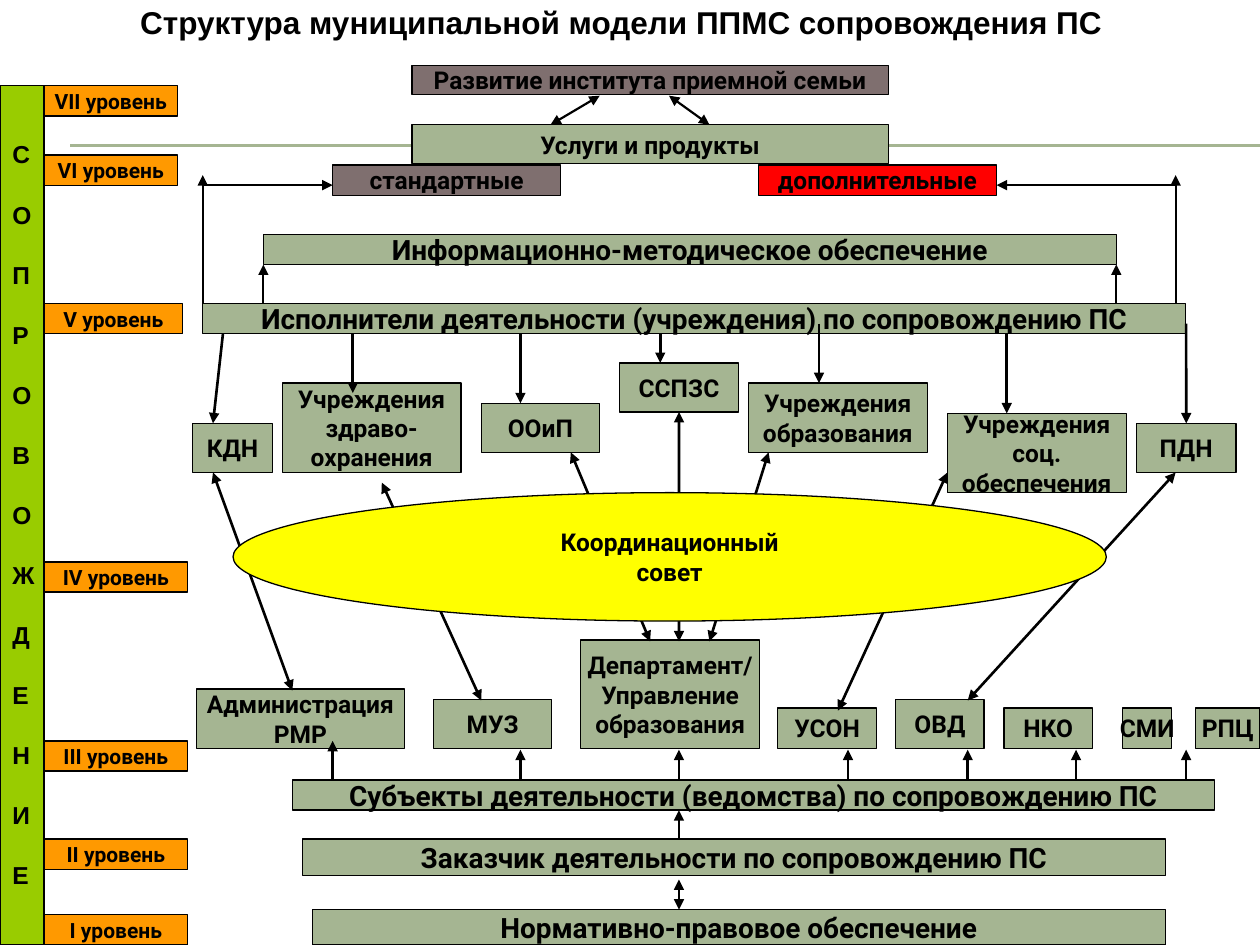
from dataclasses import dataclass
from pptx import Presentation
from pptx.dml.color import RGBColor
from pptx.enum.shapes import MSO_CONNECTOR, MSO_SHAPE
from pptx.enum.text import MSO_ANCHOR, PP_ALIGN
from pptx.oxml.xmlchemy import OxmlElement
from pptx.util import Pt

RECT, OVAL = MSO_SHAPE.RECTANGLE, MSO_SHAPE.OVAL
LINE = MSO_CONNECTOR.STRAIGHT
MID, TOP, LOW = MSO_ANCHOR.MIDDLE, MSO_ANCHOR.TOP, MSO_ANCHOR.BOTTOM
LEFT, CENTER = PP_ALIGN.LEFT, PP_ALIGN.CENTER
BLACK, SAGE, TAUPE = "000000", "A5B592", "7F6F6F"
ORANGE, RED, YELLOW, LIME = "FF9900", "FF0000", "FFFF00", "99CC00"


@dataclass
class Box:
    text: str
    x: float
    y: float
    w: float
    h: float
    size: float = 14
    fill: str = SAGE
    kind: int = RECT


@dataclass
class Arrow:
    x1: float
    y1: float
    x2: float
    y2: float
    width: float = 1.5
    head: bool = False
    tail: bool = True
    color: str = BLACK


def tint(code: str) -> RGBColor:
    return RGBColor.from_string(code)


def style(frame, text: str, size: float, face: str = "Roboto", align=CENTER,
          anchor=MID, gap: float = 0) -> None:
    frame.text = text
    frame.word_wrap = False
    frame.vertical_anchor = anchor
    form = {"size": Pt(size), "name": face, "bold": True}
    for row, para in enumerate(frame.paragraphs):
        para.alignment = align
        if row and gap:
            para.space_before = Pt(gap)
        for key, value in form.items():
            setattr(para.font, key, value)
        para.font.color.rgb = tint(BLACK)


def draw_box(slide, box: Box):
    shape = slide.shapes.add_shape(box.kind, Pt(box.x), Pt(box.y), Pt(box.w), Pt(box.h))
    shape.shadow.inherit = False
    shape.fill.solid()
    shape.fill.fore_color.rgb = tint(box.fill)
    shape.line.color.rgb = tint(BLACK)
    shape.line.width = Pt(0.75)
    style(shape.text_frame, box.text, box.size)
    return shape


def draw_line(slide, arrow: Arrow):
    line = slide.shapes.add_connector(
        LINE, Pt(arrow.x1), Pt(arrow.y1), Pt(arrow.x2), Pt(arrow.y2))
    line.line.color.rgb = tint(arrow.color)
    line.line.width = Pt(arrow.width)
    for show, tag in ((arrow.head, "a:headEnd"), (arrow.tail, "a:tailEnd")):
        if show:
            end = OxmlElement(tag)
            end.set("type", "triangle")
            line.get_or_add_ln().append(end)
    line._element.spPr.append(OxmlElement("a:effectLst"))
    return line


LEVELS = [
    Box(f"{num} уровень", 25.2, y, w, 17.3, 12, ORANGE)
    for num, y, w in (
        ("I", 522.7, 82), ("II", 479.5, 82), ("III", 423.4, 82), ("IV", 321.1, 82),
        ("V", 173.5, 79.2), ("VI", 88.6, 76.3), ("VII", 49, 76.3))
]
BARS = [
    Box("Нормативно-правовое обеспечение", 178.5, 519.8, 487.5, 20.2, 16),
    Box("Заказчик деятельности по сопровождению ПС", 172.8, 479.5, 493.2, 20.9, 16),
    Box("Субъекты деятельности (ведомства) по сопровождению ПС", 167, 445.7, 527, 17.3, 16),
    Box("Информационно-методическое обеспечение", 150.5, 133.9, 487.5, 17.3, 16),
    Box("Исполнители деятельности (учреждения) по сопровождению ПС",
        115.9, 173.5, 561.6, 17.3, 16),
    Box("Услуги и продукты", 235.4, 71.3, 272.2, 22.3),
    Box("Развитие института приемной семьи", 235.4, 37.4, 272.2, 16.6, 14, TAUPE),
    Box("стандартные", 190.1, 94.3, 130.3, 17.3, 14, TAUPE),
    Box("дополнительные", 433.4, 94.3, 136.1, 17.3, 14, RED),
]
OFFICES = [
    Box("Администрация\nРМР", 112.3, 393.8, 118.8, 33.8),
    Box("МУЗ", 247.7, 399.6, 67.7, 28.1),
    Box("Департамент/\nУправление\nобразования", 331.9, 365.8, 102.2, 61.9),
    Box("УСОН", 444.2, 404.6, 56.9, 23),
    Box("ОВД", 511.9, 399.6, 50.4, 28.1),
    Box("НКО", 573.8, 404.6, 50.4, 23),
    Box("СМИ", 641.5, 404.6, 28.1, 23),
    Box("РПЦ", 683.3, 404.6, 36.7, 23),
]
UNITS = [
    Box("КДН", 110.2, 241.9, 45.4, 28.1),
    Box("Учреждения\nздраво-\nохранения", 161.3, 218.9, 102.2, 51.1),
    Box("ООиП", 275, 230.4, 67.7, 28.1),
    Box("ССПЗС", 354.2, 207.4, 67.7, 28.1),
    Box("Учреждения\nобразования", 427.7, 218.9, 102.2, 39.6),
    Box("Учреждения\nсоц.\nобеспечения", 541.4, 236.2, 102.2, 45.4),
    Box("ПДН", 649.4, 241.9, 56.9, 28.1),
]
COUNCIL = Box("Координационный\nсовет", 133.2, 281.5, 499, 73.4, 14, YELLOW, OVAL)
HUB = Arrow(388, 366.5, 388, 235.5, head=True)
LAST = Arrow(677.8, 185, 677.8, 241.9)
CROSS = [
    Arrow(*ends, head=True) for ends in (
        (121.7, 270, 167, 394.6), (218.2, 275.8, 275, 400.3),
        (541.4, 270, 478.8, 406.1), (371.5, 366.5, 326.2, 258.5),
        (405.4, 366.5, 439.2, 258.5), (671.8, 270, 553, 400.3))
]
RISES = [
    Arrow(x, 445.7, x, y) for x, y in (
        (190.1, 423.4), (297.4, 428.4), (388, 428.4), (484.6, 428.4),
        (553, 428.4), (614.9, 428.4), (677.8, 428.4))
]
DROPS = [
    Arrow(*ends) for ends in (
        (127.4, 190.8, 121.7, 241.9), (201.6, 190.8, 201.6, 224.6),
        (297.4, 190.8, 297.4, 230.4), (377.3, 190.8, 377.3, 207.4),
        (468, 185, 468, 218.9), (575.3, 190.8, 575.3, 236.2))
]
SIDES = [
    Arrow(*ends, width=1.25) for ends in (
        (150.5, 173.5, 150.5, 151.2), (637.9, 173.5, 637.9, 151.2),
        (671.8, 173.5, 671.8, 100.1), (115.9, 173.5, 115.9, 100.1),
        (115.9, 105.8, 190.1, 105.8), (671.8, 105.8, 569.5, 105.8))
]
LINKS = [
    Arrow(388, 519.8, 388, 502.6, head=True),
    Arrow(388, 479.5, 388, 463),
    Arrow(342.7, 54.7, 314.6, 71.3, 1.25, True),
    Arrow(382.3, 54.7, 405.4, 71.3, 1.25, True),
]


def main() -> None:
    deck = Presentation()
    deck.slide_width, deck.slide_height = Pt(720), Pt(540)
    slide = deck.slides.add_slide(deck.slide_layouts[6])

    for y in (82.8, 83.5):
        draw_line(slide, Arrow(40.3, y, 720, y, 0.75, tail=False, color=SAGE))

    title = slide.shapes.add_textbox(Pt(-15), Pt(9.4), Pt(740), Pt(17.3))
    style(title.text_frame, "Структура муниципальной модели ППМС сопровождения ПС",
          18, "Arial", anchor=LOW)
    title.text_frame.word_wrap = True

    shapes = {box.text: draw_box(slide, box) for box in LEVELS + BARS + OFFICES + UNITS}
    for arrow in CROSS:
        draw_line(slide, arrow)
    draw_line(slide, HUB).end_connect(shapes["ССПЗС"], 2)
    draw_box(slide, COUNCIL)
    for arrow in RISES + DROPS + SIDES + LINKS:
        draw_line(slide, arrow)
    draw_line(slide, LAST).end_connect(shapes["ПДН"], 0)

    band = draw_box(slide, Box("", 0, 49, 25.2, 491, fill=LIME))
    style(band.text_frame, "\n".join("СОПРОВОЖДЕНИЕ"), 14, "Arial", LEFT, TOP, 17.5)
    band.text_frame.margin_top = Pt(30.7)
    deck.save("out.pptx")


if __name__ == "__main__":
    main()
